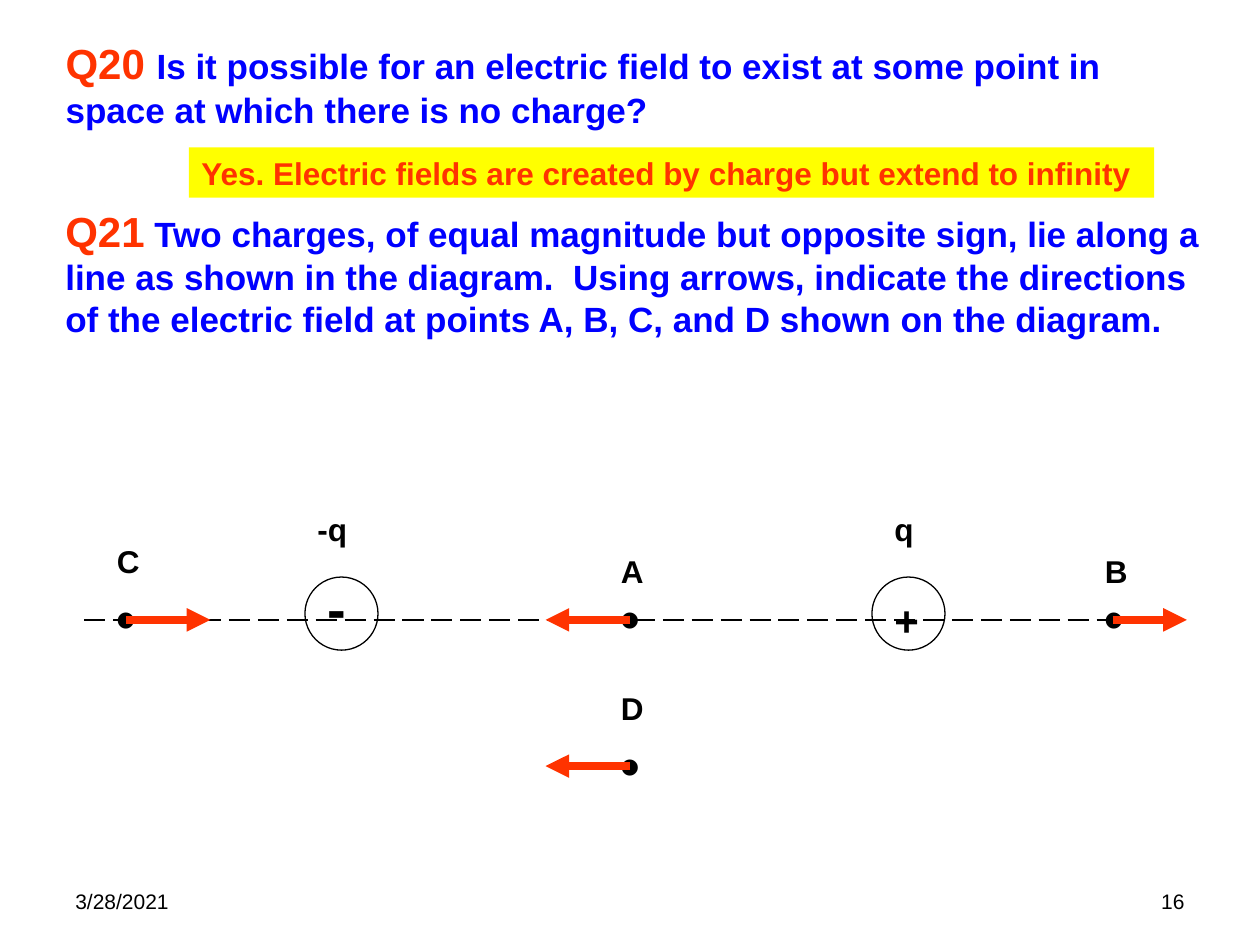
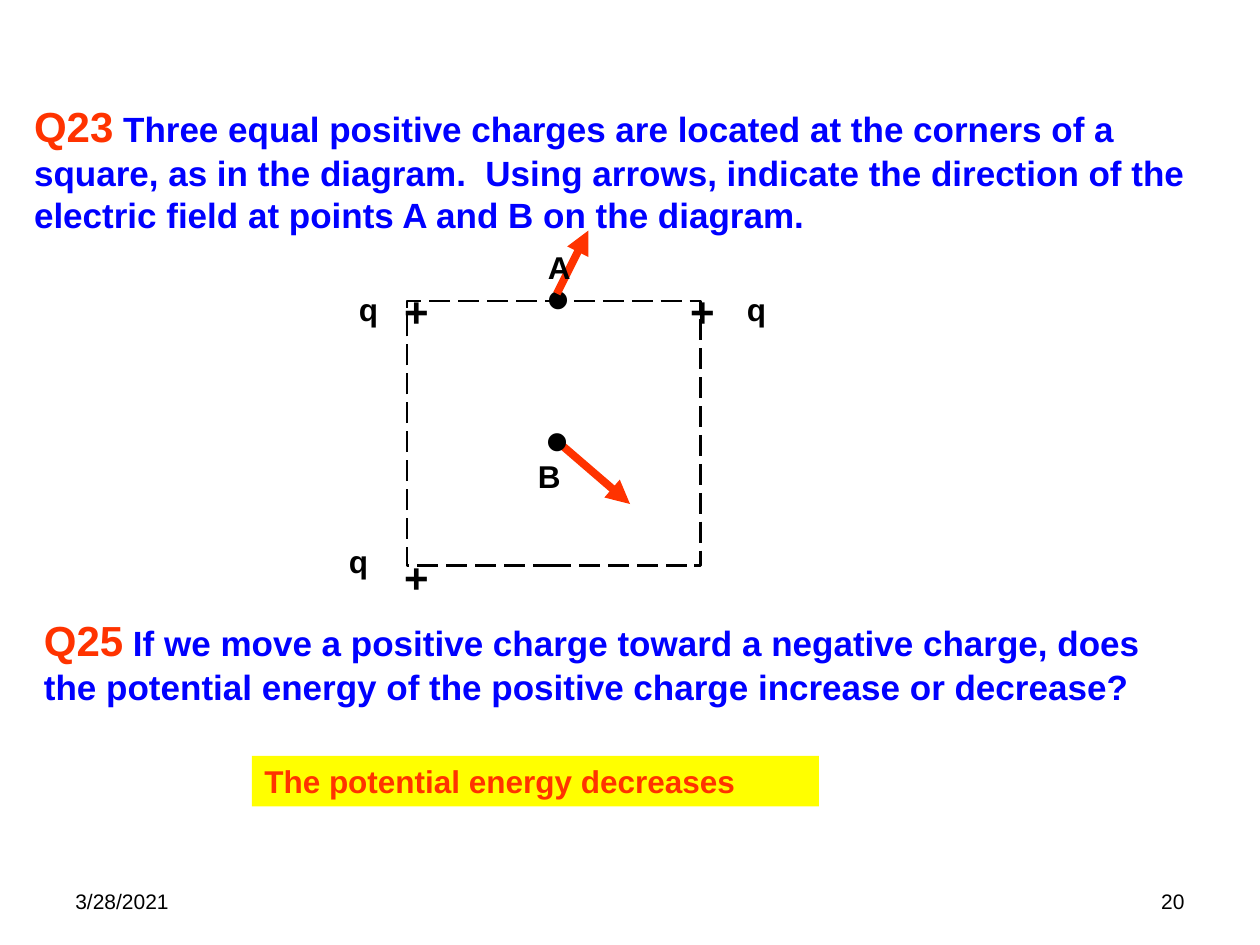
from lxml.etree import SubElement
from pptx import Presentation
from pptx.dml.color import RGBColor
from pptx.enum.dml import MSO_LINE
from pptx.enum.shapes import MSO_CONNECTOR, MSO_SHAPE
from pptx.enum.text import MSO_ANCHOR, MSO_AUTO_SIZE, PP_ALIGN
from pptx.oxml.ns import qn
from pptx.util import Inches, Pt

RED = "FF3300"
BLUE = "0000FF"
BLACK = "000000"
YELLOW = "FFFF00"


def write(page, place, text, size=18, color=BLACK, bold=True, lead="", fill=None,
          align=PP_ALIGN.LEFT, anchor=MSO_ANCHOR.TOP, spaced=True, box=None):
    left, top, width, height = [Inches(value) for value in place]
    if box is None:
        box = page.shapes.add_textbox(left, top, width, height)
    box.left, box.top, box.width, box.height = left, top, width, height
    if fill:
        box.fill.solid()
        box.fill.fore_color.rgb = RGBColor.from_string(fill)
    frame = box.text_frame
    frame.word_wrap = True
    frame.auto_size = MSO_AUTO_SIZE.NONE
    frame.vertical_anchor = anchor
    para = frame.paragraphs[0]
    para.alignment = align
    if spaced:
        before = SubElement(para._p.get_or_add_pPr(), qn("a:spcBef"))
        SubElement(before, qn("a:spcPct"), val="50000")
    for words, points, shade in [(lead, 24, RED), (text, size, color)]:
        if words:
            span = para.add_run()
            span.text = words
            span.font.name = "Arial"
            span.font.size = Pt(points)
            span.font.bold = bold
            span.font.color.rgb = RGBColor.from_string(shade)


def draw_line(page, start, end, color=RED, weight=4.5, arrow=True):
    line = page.shapes.add_connector(MSO_CONNECTOR.STRAIGHT,
                                     *[Inches(value) for value in start + end])
    line.line.color.rgb = RGBColor.from_string(color)
    line.line.width = Pt(weight)
    if arrow:
        SubElement(line.line._get_or_add_ln(), qn("a:tailEnd"), type="triangle")
    else:
        line.line.dash_style = MSO_LINE.LONG_DASH
    SubElement(line._element.spPr, qn("a:effectLst"))


deck = Presentation()
deck.slide_width, deck.slide_height = Inches(10), Inches(7.5)
charges_page, square_page = [deck.slides.add_slide(deck.slide_layouts[5]) for _ in range(2)]

for page, number in [(charges_page, "16"), (square_page, "20")]:
    for left, text, align in [(0.5, "3/28/2021", PP_ALIGN.LEFT), (7.17, number, PP_ALIGN.RIGHT)]:
        write(page, (left, 6.95, 2.33, 0.4), text, size=12, bold=False, align=align,
              anchor=MSO_ANCHOR.MIDDLE, spaced=False)

questions = [
    (charges_page, (0.42, 0.25, 9.25, 0.83), "Q20 ", charges_page.shapes.title,
     "Is it possible for an electric field to exist at some point in space at which there is "
     "no charge?"),
    (charges_page, (0.42, 1.58, 9.25, 1.17), "Q21", None,
     " Two charges, of equal magnitude but opposite sign, lie along a line as shown in the "
     "diagram.  Using arrows, indicate the directions of the electric field at points A, B, C, "
     "and D shown on the diagram."),
    (square_page, (0.17, 0.75, 9.5, 1.17), "Q23", square_page.shapes.title,
     " Three equal positive charges are located at the corners of a square, as in the diagram.  "
     "Using arrows, indicate the direction of the electric field at points A and B on the "
     "diagram."),
    (square_page, (0.25, 4.83, 9.25, 0.83), "Q25", None,
     " If we move a positive charge toward a negative charge, does the potential energy of the "
     "positive charge increase or decrease?"),
]
for page, place, lead, box, text in questions:
    write(page, place, text, size=20, color=BLUE, lead=lead, box=box)

write(charges_page, (1.5, 1.17, 7.66, 0.4),
      "Yes. Electric fields are created by charge but extend to infinity",
      color=RED, fill=YELLOW, spaced=False)
write(square_page, (2, 6, 4.5, 0.4), "The potential energy decreases", color=RED, fill=YELLOW)

draw_line(charges_page, (0.67, 4.92), (9.17, 4.92), color=BLACK, weight=1.5, arrow=False)
for left, top in [(0.83, 4.58), (4.83, 4.58), (8.67, 4.58), (4.83, 5.75)]:
    write(charges_page, (left, top, 0.36, 0.63), "•", size=32)

for left, sign, sign_top, size in [(2.42, "-", 4.5, 32), (6.92, "+", 4.67, 24)]:
    charge = charges_page.shapes.add_shape(MSO_SHAPE.FLOWCHART_CONNECTOR, Inches(left),
                                           Inches(4.58), Inches(0.58), Inches(0.58))
    charge.shadow.inherit = False
    charge.fill.background()
    charge.line.color.rgb = RGBColor.from_string(BLACK)
    charge.line.width = Pt(0.75)
    write(charges_page, (left + 0.08, sign_top, 0.42, 0.5), sign, size=size)

for text, left, top in [("C", 0.83, 4.25), ("-q", 2.42, 4), ("A", 4.83, 4.33),
                        ("q", 7, 4), ("B", 8.67, 4.33), ("D", 4.83, 5.42)]:
    write(charges_page, (left, top, 0.58, 0.4), text)

for start, tip, height in [(5, 4.33, 6.08), (1, 1.67, 4.92), (8.83, 9.42, 4.92), (5, 4.33, 4.92)]:
    draw_line(charges_page, (start, height), (tip, height))

write(square_page, (4.25, 2, 0.36, 0.7), "•", size=36)
draw_line(square_page, (4.42, 2.33), (4.67, 1.83))
draw_line(square_page, (4.42, 3.5), (5, 4))

square = square_page.shapes.add_shape(MSO_SHAPE.RECTANGLE, Inches(3.23), Inches(2.39),
                                      Inches(2.33), Inches(2.1))
square.shadow.inherit = False
square.fill.background()
square.line.color.rgb = RGBColor.from_string(BLACK)
square.line.width = Pt(1.5)
square.line.dash_style = MSO_LINE.LONG_DASH

for left, top in [(3.11, 4.33), (5.38, 2.22), (3.11, 2.22)]:
    write(square_page, (left, top, 0.4, 0.5), "+", size=24)
for text, left, top in [("B", 4.17, 3.58), ("q", 2.75, 2.25), ("q", 5.83, 2.25),
                        ("A", 4.25, 1.92), ("q", 2.67, 4.25)]:
    write(square_page, (left, top, 0.36, 0.4), text)
write(square_page, (4.24, 3.13, 0.36, 0.7), "•", size=36)

deck.save("out.pptx")
